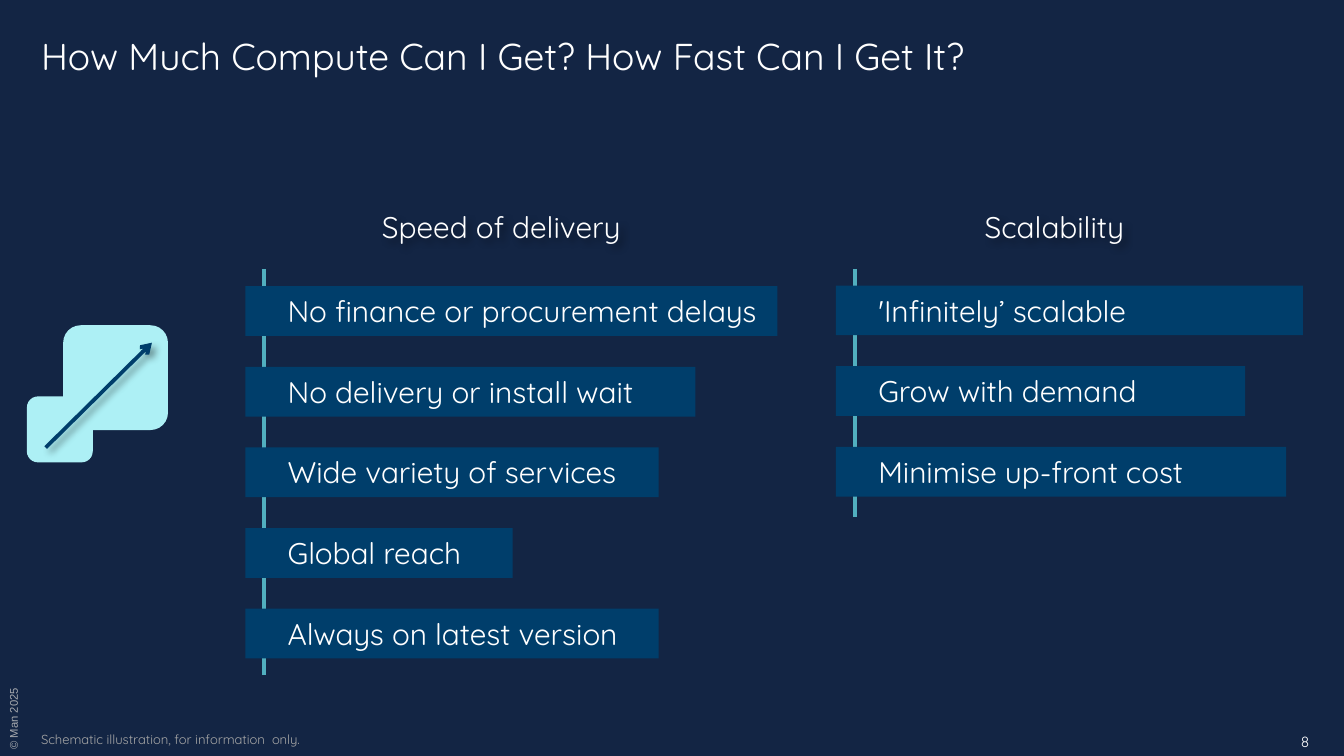
from lxml.etree import SubElement
from pptx import Presentation
from pptx.dml.color import RGBColor
from pptx.enum.shapes import MSO_CONNECTOR, MSO_SHAPE
from pptx.enum.text import MSO_ANCHOR, MSO_AUTO_SIZE, PP_ALIGN
from pptx.oxml.ns import qn
from pptx.util import Emu, Pt

SCALE = 4572  # EMU in one px, 200 px to the inch


def px(*nums):
    return [Emu(n * SCALE) for n in nums]


def color(code):
    return RGBColor.from_string(code)


def write(shape, text, size=16, font="Quicksand", ink="FFFFFF", align=PP_ALIGN.LEFT,
          anchor=MSO_ANCHOR.TOP, inset=(20, 10, 20, 10), wrap=True, space=None):
    frame = shape.text_frame
    frame.auto_size = MSO_AUTO_SIZE.NONE
    frame.word_wrap = wrap
    frame.vertical_anchor = anchor
    (frame.margin_left, frame.margin_top,
     frame.margin_right, frame.margin_bottom) = px(*inset)
    frame.text = text
    par = frame.paragraphs[0]
    par.alignment = align
    if space:
        par.line_spacing = space
    face = par.runs[0].font
    face.size = Pt(size)
    face.name = font
    face.color.rgb = color(ink)


def shade(shape):
    """Give a soft shadow to the lower right."""
    shape.shadow.inherit = False
    effects = shape._element.spPr.find(qn("a:effectLst"))
    outer = SubElement(effects, qn("a:outerShdw"), blurRad=str(Pt(4)),
                       dist=str(Pt(3)), dir="2700000", algn="tl", rotWithShape="0")
    tint = SubElement(outer, qn("a:srgbClr"), val="000000")
    SubElement(tint, qn("a:alpha"), val="40000")


class Deck:
    back, navy, teal, aqua = "132544", "003E6B", "51AFBF", "ADF0F5"

    def __init__(self, wide, high):
        self.file = Presentation()
        self.file.slide_width, self.file.slide_height = px(wide, high)
        self.slide = self.file.slides.add_slide(self.file.slide_layouts[5])
        fill = self.slide.background.fill
        fill.solid()
        fill.fore_color.rgb = color(self.back)

    def title(self, box, text):
        shape = self.slide.shapes.title
        shape.left, shape.top, shape.width, shape.height = px(*box)
        write(shape, text, size=20, inset=(0, 8, 0, 8))

    def label(self, box, text, turn=0, **style):
        shape = self.slide.shapes.add_textbox(*px(*box))
        shape.rotation = turn
        write(shape, text, **style)
        return shape

    def group(self):
        return self.slide.shapes.add_group_shape().shapes

    def block(self, group, kind, box, fill):
        shape = group.add_shape(kind, *px(*box))
        shape.shadow.inherit = False
        shape.fill.solid()
        shape.fill.fore_color.rgb = color(fill)
        shape.line.fill.background()
        return shape

    def stem(self, group, x, top, end):
        line = group.add_connector(MSO_CONNECTOR.STRAIGHT, *px(x, top, x, end))
        line.line.color.rgb = color(self.teal)
        line.line.width = Pt(2)
        SubElement(line._element.spPr, qn("a:effectLst"))

    def arrow(self, group, start, end):
        path = group.build_freeform(*px(*start))
        path.add_line_segments([px(*end)], close=False)
        shape = path.convert_to_shape()
        shape.fill.background()
        shape.line.color.rgb = color(self.navy)
        shape.line.width = Pt(2)
        SubElement(shape.line._get_or_add_ln(), qn("a:tailEnd"), type="arrow")
        shade(shape)

    def column(self, head, name, left, top, end, bars):
        """Heading over a stem with evenly spaced bars."""
        group = self.group()
        self.stem(group, left + 28, 400, end)
        for row, (text, wide) in enumerate(bars):
            box = (left, top + 120 * row, wide, 74)
            bar = self.block(group, MSO_SHAPE.RECTANGLE, box, self.navy)
            write(bar, text, inset=(63, 10, 20, 10))
        shade(self.label(head, name, align=PP_ALIGN.CENTER, anchor=MSO_ANCHOR.MIDDLE))


def main():
    deck = Deck(2000, 1125)
    deck.title((61, 41, 1742, 84), "How Much Compute Can I Get? How Fast Can I Get It?")

    # Two columns of benefits
    deck.column((493, 286, 506, 102), "Speed of delivery", 365, 426, 1004, [
        ("No finance or procurement delays", 792),
        ("No delivery or install wait", 670),
        ("Wide variety of services", 615),
        ("Global reach", 398),
        ("Always on latest version", 615),
    ])
    deck.column((1308, 286, 522, 102), "Scalability", 1244, 425, 770, [
        ("'Infinitely’ scalable", 695),
        ("Grow with demand", 609),
        ("Minimise up-front cost", 670),
    ])

    # Growth icon
    icon = deck.group()
    for box in ((94, 484, 156, 156), (40, 590, 98, 98)):
        deck.block(icon, MSO_SHAPE.ROUNDED_RECTANGLE, box, deck.aqua)
    deck.arrow(icon, (68, 666), (226, 510))

    # Footer
    deck.label((-26, 1059, 92, 20), "© Man 2025", turn=270, size=6, font="Arial",
               ink="A7AAAF", anchor=MSO_ANCHOR.BOTTOM, inset=(0, 0, 0, 0), wrap=False)
    deck.label((61, 1082, 1878, 38), "Schematic illustration, for information  only.",
               size=7, ink="A6A6A6", anchor=MSO_ANCHOR.BOTTOM, inset=(0, 8, 0, 8),
               space=0.9)
    deck.label((1916, 1081, 84, 38), "8", size=8)

    deck.file.save("out.pptx")


if __name__ == "__main__":
    main()
